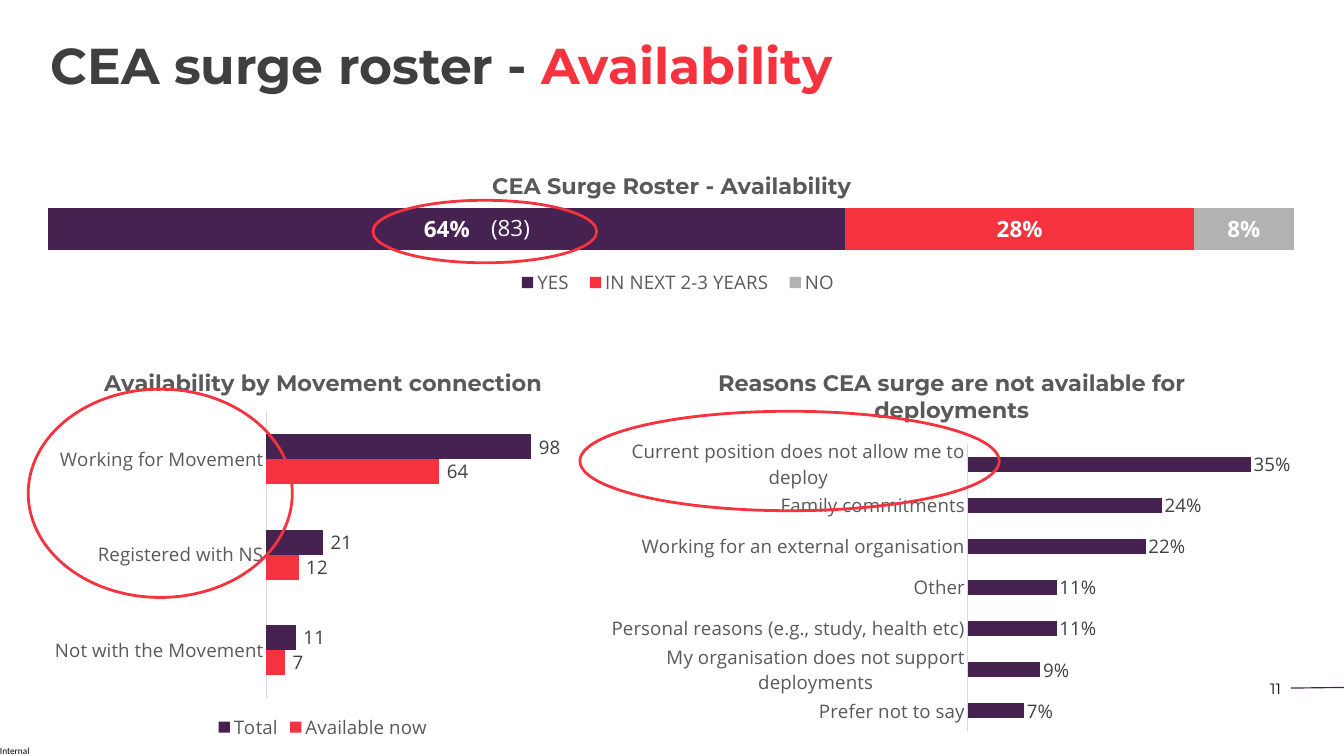
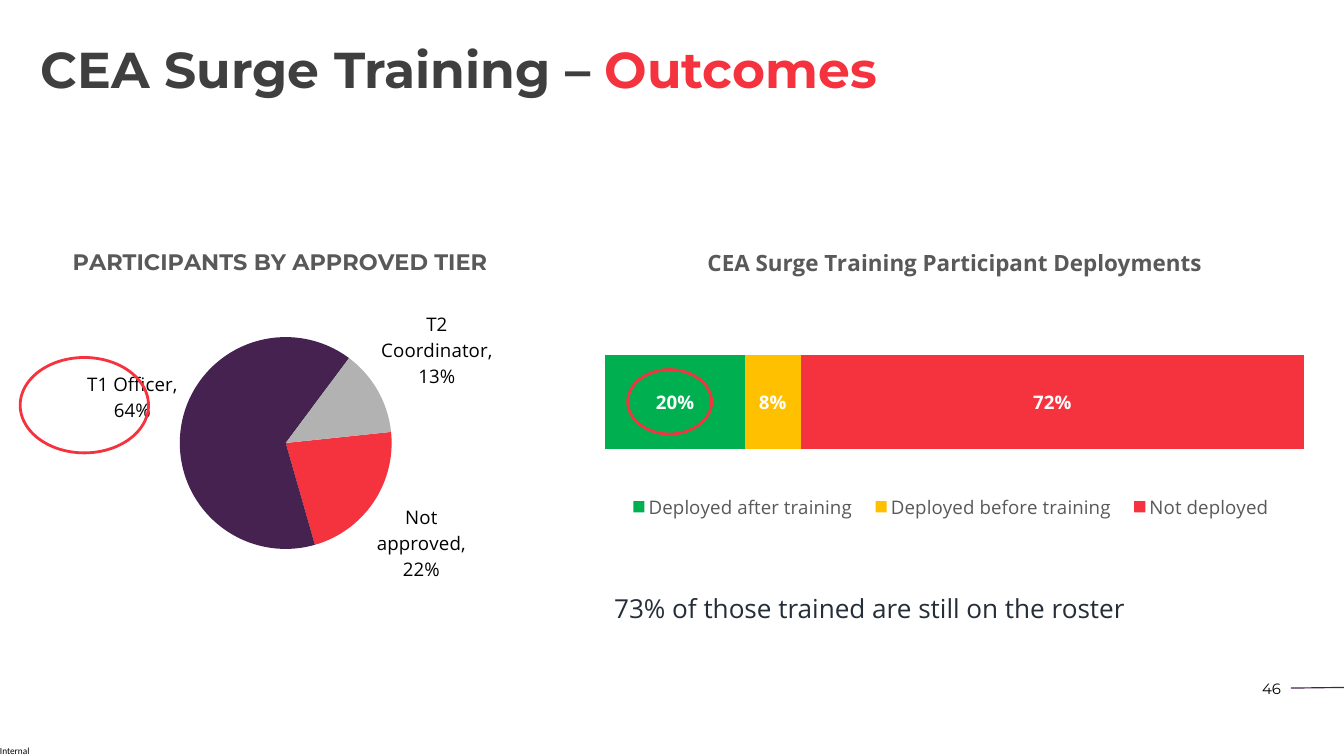
from dataclasses import dataclass
from typing import Optional

from lxml.etree import SubElement
from pptx import Presentation
from pptx.chart.data import CategoryChartData
from pptx.dml.color import RGBColor
from pptx.enum.chart import XL_CHART_TYPE as Kind
from pptx.enum.chart import XL_LABEL_POSITION as LabelAt
from pptx.enum.chart import XL_LEGEND_POSITION as LegendAt
from pptx.enum.chart import XL_TICK_LABEL_POSITION as TickLabelAt
from pptx.enum.chart import XL_TICK_MARK as Tick
from pptx.enum.shapes import MSO_CONNECTOR as Connector
from pptx.enum.shapes import MSO_SHAPE as Preset
from pptx.enum.text import MSO_ANCHOR as Anchor
from pptx.enum.text import MSO_AUTO_SIZE as AutoSize
from pptx.enum.text import PP_ALIGN as Align
from pptx.oxml import parse_xml
from pptx.oxml.ns import nsdecls, qn
from pptx.util import Inches, Pt

WIDTH, HEIGHT = Inches(20), Inches(11.25)
COLOURS = {
    "purple": "452250", "red": "F5333F", "grey": "B2B2B2", "green": "00B050",
    "amber": "FFC000", "charcoal": "3F3F3F", "label": "404040", "text": "595959",
    "axis": "D9D9D9", "note": "242D38", "black": "000000", "white": "FFFFFF",
}
HEADING, BODY, FOOTER = "Montserrat", "Open Sans", "Calibri"
PERCENT, COUNT = "0%", "\\ ##"


@dataclass(frozen=True)
class Box:
    left: float
    top: float
    width: float
    height: float

    def emu(self) -> tuple:
        return across(self.left), down(self.top), across(self.width), down(self.height)


@dataclass(frozen=True)
class Style:
    size: float
    colour: str
    family: str = BODY
    bold: bool = False


@dataclass(frozen=True)
class Series:
    name: str
    values: tuple
    colour: str


@dataclass(frozen=True)
class ChartPlan:
    box: Box
    kind: Kind
    title: str
    categories: tuple
    series: tuple
    labels: Style
    number_format: str = PERCENT
    title_family: str = HEADING
    gap: int = 182
    legend: bool = False
    plot_layout: Optional[Box] = None
    legend_layout: Optional[Box] = None
    maximum: Optional[float] = None


def across(share: float) -> int:
    return round(WIDTH * share / 100)


def down(share: float) -> int:
    return round(HEIGHT * share / 100)


def rgb(colour: str) -> RGBColor:
    return RGBColor.from_string(COLOURS[colour])


def style_font(font, style: Style) -> None:
    font.size, font.bold, font.name = Pt(style.size), style.bold, style.family
    font.color.rgb = rgb(style.colour)


def add_run(paragraph, text: str, style: Style) -> None:
    run = paragraph.add_run()
    run.text = text
    style_font(run.font, style)


def add_label(slide, box: Box, text: str, style: Style, align=Align.LEFT,
              inset: Optional[float] = None, after: float = 0) -> None:
    frame = slide.shapes.add_textbox(*box.emu()).text_frame
    frame.word_wrap = True
    frame.auto_size = AutoSize.SHAPE_TO_FIT_TEXT
    if inset is not None:
        frame.margin_left = frame.margin_right = Inches(inset)
        frame.margin_top = frame.margin_bottom = Inches(inset)
    paragraph = frame.paragraphs[0]
    paragraph.alignment, paragraph.space_after = align, Pt(after)
    add_run(paragraph, text, style)


def start_slide(deck, title_box: Box, subject: str, topic: str, number: str):
    slide = deck.slides.add_slide(deck.slide_layouts[5])
    title = slide.shapes.title
    title.left, title.top, title.width, title.height = title_box.emu()
    frame = title.text_frame
    frame.auto_size, frame.vertical_anchor = AutoSize.NONE, Anchor.MIDDLE
    frame.word_wrap = True
    paragraph = frame.paragraphs[0]
    paragraph.alignment, paragraph.line_spacing = Align.LEFT, 0.8
    add_run(paragraph, subject, Style(54, "charcoal", HEADING, True))
    add_run(paragraph, topic, Style(54, "red", HEADING, True))

    rule = slide.shapes.add_connector(
        Connector.STRAIGHT, across(96.05), down(91.02), across(100), down(90.93))
    rule.line.color.rgb, rule.line.width = rgb("purple"), Pt(1.25)
    SubElement(rule._element.spPr, qn("a:effectLst"))
    add_label(slide, Box(92.2, 89.42, 3.6, 3.29), number,
              Style(16, "black", HEADING), Align.RIGHT)
    add_label(slide, Box(0, 98.58, 2.35, 1.51), "Internal",
              Style(10, "black", FOOTER), inset=0)
    return slide


def add_highlight(slide, box: Box) -> None:
    ring = slide.shapes.add_shape(Preset.OVAL, *box.emu())
    ring.shadow.inherit = False
    ring.fill.background()
    ring.line.color.rgb, ring.line.width = rgb("red"), Pt(3)


def layout_xml(box: Box, inner: bool):
    target = '<c:layoutTarget val="inner"/>' if inner else ""
    modes = '<c:xMode val="edge"/><c:yMode val="edge"/>'
    sides = zip("xywh", (box.left, box.top, box.width, box.height))
    places = "".join(f'<c:{side} val="{share / 100:.3f}"/>' for side, share in sides)
    return parse_xml(f'<c:layout {nsdecls("c")}><c:manualLayout>{target}{modes}'
                     f'{places}</c:manualLayout></c:layout>')


def place_part(chart, tag: str, box: Optional[Box], index: int) -> None:
    if box is None:
        return
    part = chart.element.find(f".//{qn(tag)}")
    for old in part.findall(qn("c:layout")):
        part.remove(old)
    part.insert(index, layout_xml(box, tag == "c:plotArea"))


def format_labels(labels, plan: ChartPlan, position) -> None:
    labels.show_value = True
    labels.number_format, labels.number_format_is_linked = plan.number_format, False
    labels.position = position
    style_font(labels.font, plan.labels)


def add_plan(slide, plan: ChartPlan):
    data = CategoryChartData()
    data.categories = plan.categories
    for series in plan.series:
        data.add_series(series.name, series.values)
    chart = slide.shapes.add_chart(plan.kind, *plan.box.emu(), data).chart
    style_font(chart.font, Style(20, "black"))
    chart.has_title = True
    add_run(chart.chart_title.text_frame.paragraphs[0], plan.title,
            Style(24, "text", plan.title_family, True))
    chart.has_legend = plan.legend
    if plan.legend:
        chart.legend.position = LegendAt.BOTTOM
        chart.legend.include_in_layout = False
        style_font(chart.legend.font, Style(20, "text"))
        place_part(chart, "c:legend", plan.legend_layout, 1)
    place_part(chart, "c:plotArea", plan.plot_layout, 0)
    chart.plots[0].vary_by_categories = False
    return chart


def add_bars(slide, plan: ChartPlan) -> None:
    chart = add_plan(slide, plan)
    plot = chart.plots[0]
    stacked = plan.kind != Kind.BAR_CLUSTERED
    plot.gap_width, plot.overlap = plan.gap, 100 if stacked else 0
    values, names = chart.value_axis, chart.category_axis
    values.has_major_gridlines = False
    values.minimum_scale = 0
    if plan.maximum is not None:
        values.maximum_scale = plan.maximum
    values.visible, names.visible = False, not stacked
    if not stacked:
        names.major_tick_mark = names.minor_tick_mark = Tick.NONE
        names.tick_label_position = TickLabelAt.NEXT_TO_AXIS
        names.format.line.color.rgb = rgb("axis")
        names.format.line.width = Pt(0.75)
        style_font(names.tick_labels.font, Style(20, "text"))
    for bars, series in zip(plot.series, plan.series):
        bars.format.fill.solid()
        bars.format.fill.fore_color.rgb = rgb(series.colour)
        bars.invert_if_negative = False
        format_labels(bars.data_labels, plan,
                      LabelAt.CENTER if stacked else LabelAt.OUTSIDE_END)


def add_pie(slide, plan: ChartPlan, slices: tuple, start: int) -> None:
    chart = add_plan(slide, plan)
    plot = chart.plots[0]
    plot.vary_by_categories = True
    pie = chart.element.find(f".//{qn('c:pieChart')}")
    for old in pie.findall(qn("c:firstSliceAng")):
        pie.remove(old)
    SubElement(pie, qn("c:firstSliceAng")).set("val", str(start))
    tiers = plot.series[0]
    format_labels(tiers.data_labels, plan, LabelAt.OUTSIDE_END)
    tiers.data_labels.show_category_name = True
    for index, (caption, colour) in enumerate(slices):
        point = tiers.points[index]
        point.format.fill.solid()
        point.format.fill.fore_color.rgb = rgb(colour)
        add_run(point.data_label.text_frame.paragraphs[0], caption, plan.labels)
        point.data_label.position = LabelAt.OUTSIDE_END


def build_availability(deck) -> None:
    slide = start_slide(deck, Box(3.25, 5.51, 77.45, 7.38),
                        "CEA surge roster - ", "Availability", "11")
    add_bars(slide, ChartPlan(
        Box(2.85, 21.07, 94.25, 20.89), Kind.BAR_STACKED_100,
        "CEA Surge Roster - Availability", ("1",),
        (Series("YES", (0.64,), "purple"),
         Series("IN NEXT 2-3 YEARS", (0.28,), "red"),
         Series("NO", (0.08,), "grey")),
        Style(24, "white", bold=True), gap=150, legend=True,
        plot_layout=Box(0.8, 10.8, 98.3, 66.8), legend_layout=Box(37, 68, 27, 20)))
    add_label(slide, Box(36.05, 27.91, 4.8, 4.44), "(83)", Style(24, "white"))
    add_bars(slide, ChartPlan(
        Box(3.25, 46.49, 41.55, 51.91), Kind.BAR_CLUSTERED,
        "Availability by Movement connection",
        ("Not with the Movement", "Registered with NS", "Working for Movement"),
        (Series("Available now", (7, 12, 64), "red"),
         Series("Total", (11, 21, 98), "purple")),
        Style(20, "label"), COUNT, legend=True))
    add_bars(slide, ChartPlan(
        Box(44.45, 46.49, 52.7, 51.29), Kind.BAR_CLUSTERED,
        "Reasons CEA surge are not available for deployments",
        ("Prefer not to say", "My organisation does not support deployments",
         "Personal reasons (e.g., study, health etc)", "Other",
         "Working for an external organisation", "Family commitments",
         "Current position does not allow me to deploy"),
        (Series("Series 1", (0.07, 0.09, 0.11, 0.11, 0.22, 0.24, 0.35), "purple"),),
        Style(20, "label")))
    for ring in (Box(43.15, 54.4, 31.2, 13.16), Box(27.75, 26.49, 16.65, 8.27),
                 Box(2.1, 51.47, 19.65, 27.56)):
        add_highlight(slide, ring)


def build_outcomes(deck) -> None:
    slide = start_slide(deck, Box(2.55, 6.13, 77.45, 7.38),
                        "CEA Surge Training – ", "Outcomes", "46")
    add_pie(slide, ChartPlan(
        Box(-2.3, 30.58, 46.25, 49.87), Kind.PIE, "PARTICIPANTS BY APPROVED TIER",
        ("ND", "T1", "T2"), (Series("Series 1", (0.22, 0.64, 0.13), "purple"),),
        Style(20, "black"), plot_layout=Box(33.9, 28.1, 34.1, 56.2)),
        (("Not approved, 22%", "red"), ("T1 Officer, 64%", "purple"),
         ("T2 Coordinator, 13%", "grey")), 84)
    add_bars(slide, ChartPlan(
        Box(43.95, 30.58, 54.15, 44.18), Kind.BAR_STACKED,
        "CEA Surge Training Participant Deployments", ("1",),
        (Series("Deployed after training", (0.2,), "green"),
         Series("Deployed before training", (0.08,), "amber"),
         Series("Not deployed", (0.72,), "red")),
        Style(20, "white", bold=True), title_family=BODY, gap=150, legend=True,
        plot_layout=Box(2, 16, 96, 70.3), legend_layout=Box(3.5, 77.5, 92, 10),
        maximum=1))
    for ring in (Box(1.5, 47.29, 9.55, 12.62), Box(46.7, 48.89, 6.25, 8.53)):
        add_highlight(slide, ring)
    add_label(slide, Box(45.2, 77.87, 48.9, 5.07),
              "73% of those trained are still on the roster",
              Style(28, "note"), after=18)


def main() -> None:
    deck = Presentation()
    deck.slide_width, deck.slide_height = WIDTH, HEIGHT
    build_availability(deck)
    build_outcomes(deck)
    deck.save("out.pptx")


if __name__ == "__main__":
    main()
